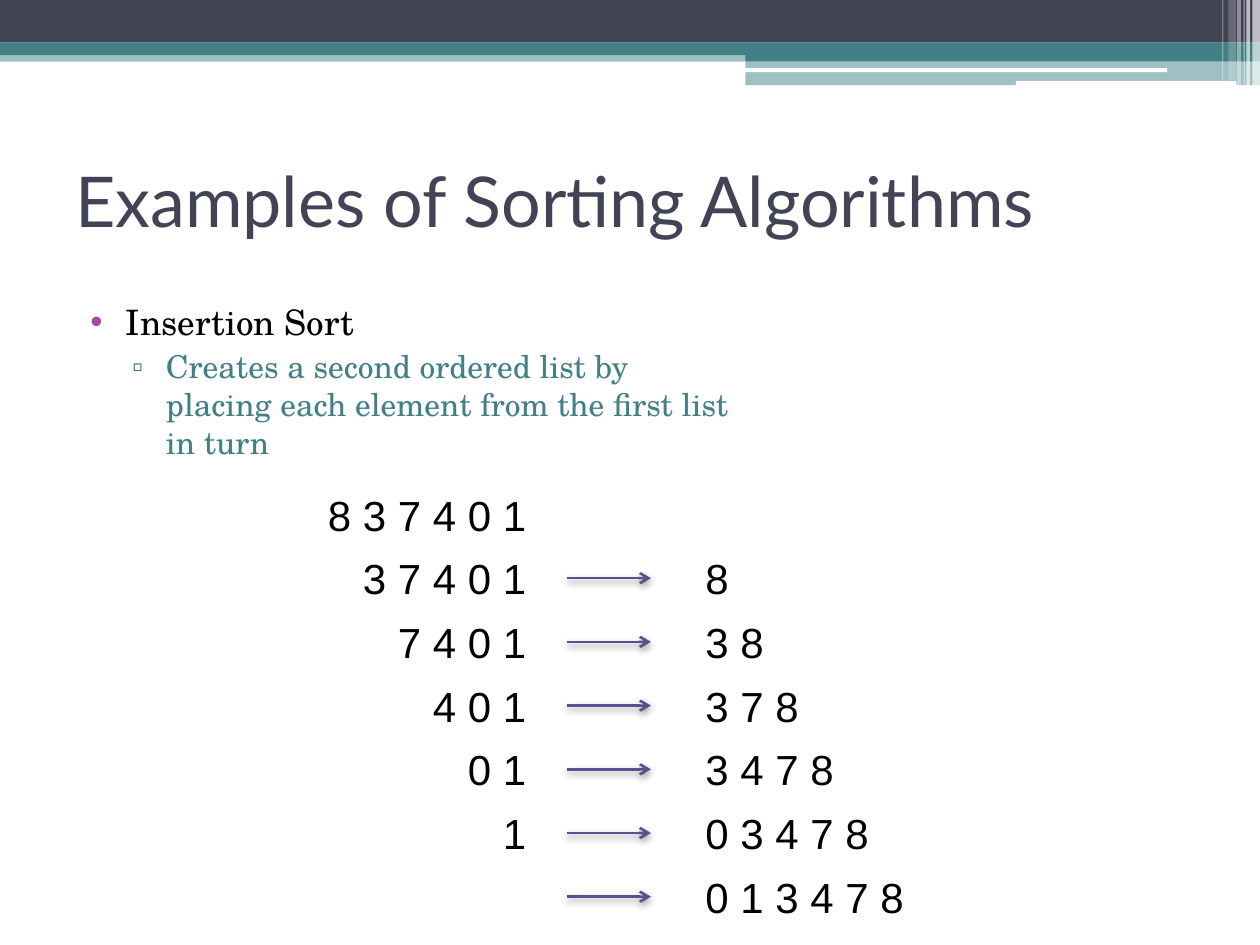
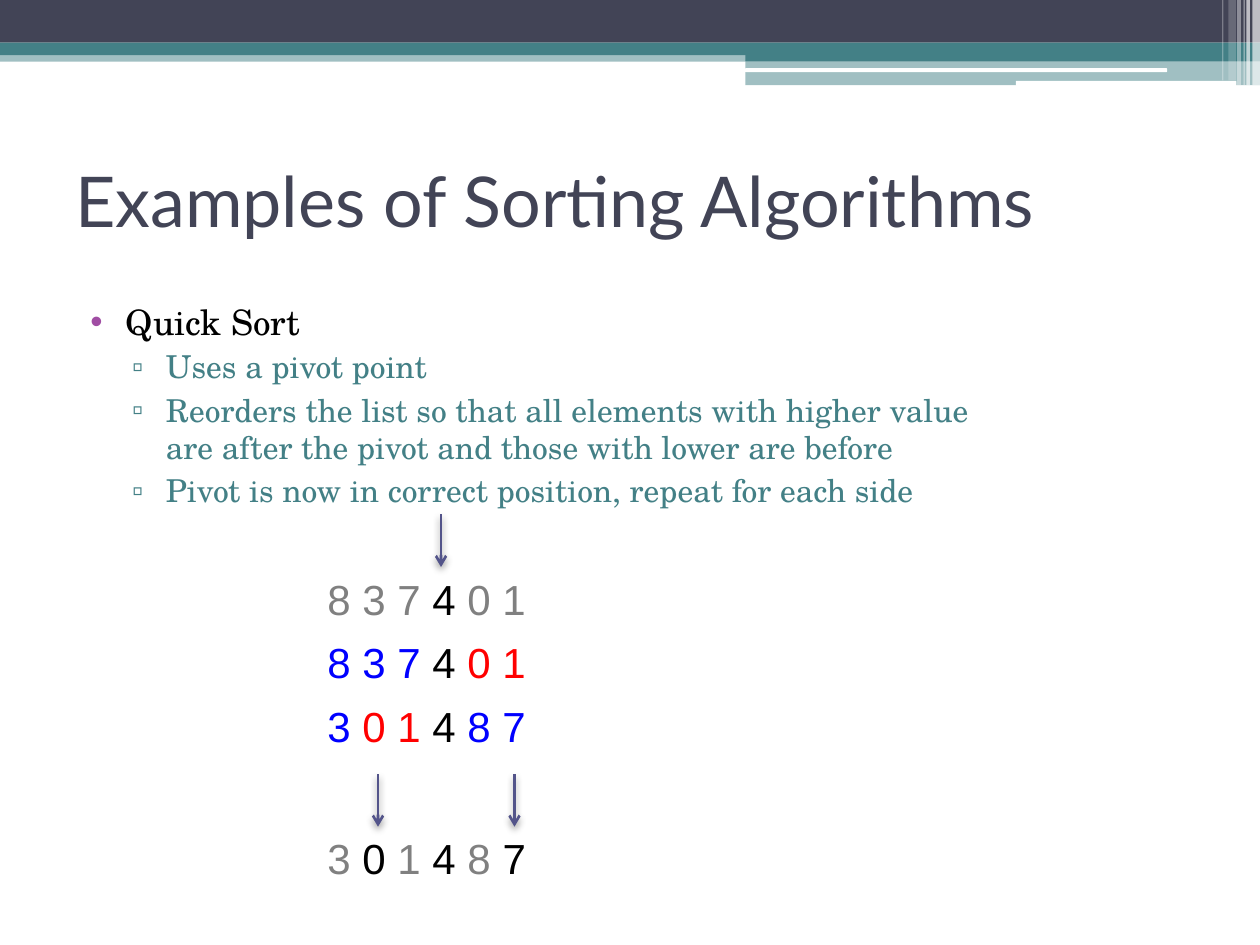
from lxml.etree import SubElement
from pptx import Presentation
from pptx.dml.color import RGBColor as RGB
from pptx.enum.shapes import MSO_CONNECTOR as LINK, MSO_SHAPE as SHAPE
from pptx.enum.text import MSO_ANCHOR as ANCHOR, PP_ALIGN as ALIGN
from pptx.oxml.ns import qn
from pptx.util import Pt

COLORS = {
    "navy": "424456", "teal": "438086", "white": "FFFFFF", "black": "000000",
    "purple": "A04DA3", "arrow": "53548A", "gray": "808080",
    "blue": "0000FF", "red": "FF0000",
}
ROW_PITCH = 36.4
ROW_HEIGHT = 36
LIST_LEFT = 180

BANDS = [
    (SHAPE.RECTANGLE, 0, 28.8, 720, 6.4, "teal", 50),
    (SHAPE.RECTANGLE, 0, 0, 720, 24.4, "navy", 100),
    (SHAPE.RECTANGLE, 0, 24.4, 720, 7.2, "teal", 100),
    (SHAPE.RECTANGLE, 426, 28.2, 294, 6.6, "teal", 100),
    (SHAPE.RECTANGLE, 426, 34.6, 294, 14.1, "teal", 50),
    (SHAPE.ROUNDED_RECTANGLE, 425.7, 39, 241.2, 2.2, "white", 100),
    (SHAPE.ROUNDED_RECTANGLE, 580.5, 46.2, 126, 2.9, "white", 100),
    (SHAPE.RECTANGLE, 715.6, 0, 4.4, 48.8, "white", 65),
    (SHAPE.RECTANGLE, 712.2, 0, 2.1, 48.8, "white", 65),
    (SHAPE.RECTANGLE, 710.6, 0, 0.7, 48.8, "white", 60),
    (SHAPE.RECTANGLE, 707, 0, 2.1, 48.8, "white", 40),
    (SHAPE.RECTANGLE, 702, 0, 4.3, 46, "white", 20),
    (SHAPE.RECTANGLE, 698.4, 0, 0.7, 46, "white", 30),
]

LEVELS = [
    {"bullet": "•", "bullet_color": "purple", "color": "black", "size": 20, "left": 28.8, "hang": -20.2},
    {"bullet": "▫", "bullet_color": "teal", "color": "teal", "size": 18, "left": 51.8, "hang": -19.4},
]

TOPICS = [
    (390, 120, ["Insertion Sort",
                "Creates a second ordered list by placing each element from the first list in turn"]),
    (546, 340, ["Quick Sort",
                "Uses a pivot point",
                "Reorders the list so that all elements with higher value are after the pivot "
                "and those with lower are before",
                "Pivot is now in correct position, repeat for each side"]),
]


def add_digits(slide, left, top, width, runs, align=ALIGN.LEFT):
    row = slide.shapes.add_textbox(Pt(left), Pt(top), Pt(width), Pt(ROW_HEIGHT)).text_frame
    row.word_wrap = True
    line = row.paragraphs[0]
    line.alignment = align
    line.font.size = Pt(24)
    line.font.name = "Arial"
    for text, color in runs:
        run = line.add_run()
        run.text = text
        run.font.color.rgb = RGB.from_string(COLORS[color])


def add_arrow(slide, x1, y1, x2, y2):
    arrow = slide.shapes.add_connector(LINK.STRAIGHT, Pt(x1), Pt(y1), Pt(x2), Pt(y2))
    arrow.line.width = Pt(1.5)
    arrow.line.color.rgb = RGB.from_string(COLORS["arrow"])
    SubElement(arrow.line._get_or_add_ln(), qn("a:tailEnd"), type="arrow")
    effects = SubElement(arrow._element.spPr, qn("a:effectLst"))
    shadow = SubElement(effects, qn("a:outerShdw"), blurRad=str(Pt(4.1)), dist=str(Pt(2)),
                        dir="5400000", rotWithShape="0")
    tint = SubElement(shadow, qn("a:srgbClr"), val=COLORS["black"])
    SubElement(tint, qn("a:alpha"), val="40000")


deck = Presentation()
deck.slide_width, deck.slide_height = Pt(720), Pt(540)

for body_width, body_height, lines in TOPICS:
    slide = deck.slides.add_slide(deck.slide_layouts[6])

    for preset, left, top, width, height, color, opacity in BANDS:
        band = slide.shapes.add_shape(preset, Pt(left), Pt(top), Pt(width), Pt(height))
        band.shadow.inherit = False
        band.line.fill.background()
        band.fill.solid()
        band.fill.fore_color.rgb = RGB.from_string(COLORS[color])
        if opacity < 100:
            tint = band._element.spPr.find(qn("a:solidFill"))[0]
            SubElement(tint, qn("a:alpha"), val=str(opacity * 1000))

    title = slide.shapes.add_textbox(Pt(36), Pt(72), Pt(648), Pt(84)).text_frame
    title.word_wrap = True
    title.vertical_anchor = ANCHOR.MIDDLE
    heading = title.paragraphs[0]
    heading.text = "Examples of Sorting Algorithms"
    heading.font.size = Pt(40)
    heading.font.name = "Lato"
    heading.font.color.rgb = RGB.from_string(COLORS["navy"])

    body = slide.shapes.add_textbox(Pt(36), Pt(168), Pt(body_width), Pt(body_height)).text_frame
    body.word_wrap = True
    for i, text in enumerate(lines):
        level = LEVELS[min(i, 1)]
        point = body.add_paragraph() if i else body.paragraphs[0]
        point.text = text
        point.level = min(i, 1)
        point.space_before = Pt(3)
        point.font.size = Pt(level["size"])
        point.font.name = "TeX Gyre Schola"
        point.font.color.rgb = RGB.from_string(COLORS[level["color"]])
        props = point._p.get_or_add_pPr()
        props.set("marL", str(Pt(level["left"])))
        props.set("indent", str(Pt(level["hang"])))
        bullet_color = SubElement(props, qn("a:buClr"))
        SubElement(bullet_color, qn("a:srgbClr"), val=COLORS[level["bullet_color"]])
        SubElement(props, qn("a:buFont"), typeface="Arial")
        SubElement(props, qn("a:buChar"), char=level["bullet"])

insertion, quick = deck.slides

unsorted = ["8", "3", "7", "4", "0", "1"]
for step in range(len(unsorted) + 1):
    top = 276 + step * ROW_PITCH
    remaining = unsorted[step:]
    placed = sorted(unsorted[:step])
    if remaining:
        add_digits(insertion, LIST_LEFT, top, 127.8, [(" ".join(remaining), "black")], ALIGN.RIGHT)
    if placed:
        add_digits(insertion, 396, top, 162, [(" ".join(placed), "black")])
        middle = top + ROW_HEIGHT / 2
        add_arrow(insertion, 324, middle, 372, middle)

first_top, last_top = 324, 472.4
passes = [
    (first_top, [("8 3 7 ", "gray"), ("4 ", "black"), ("0 1", "gray")]),
    (first_top + ROW_PITCH, [("8 3 7 ", "blue"), ("4 ", "black"), ("0 1", "red")]),
    (first_top + 2 * ROW_PITCH, [("3 ", "blue"), ("0 1 ", "red"), ("4 ", "black"), ("8 7", "blue")]),
    (last_top, [("3 ", "gray"), ("0 ", "black"), ("1 ", "gray"), ("4 ", "black"),
                ("8 ", "gray"), ("7", "black")]),
]
for top, runs in passes:
    add_digits(quick, LIST_LEFT, top, 192, runs)

for pivot_x, tip in [(252, first_top), (216, last_top), (294, last_top)]:
    add_arrow(quick, pivot_x, tip - 30, pivot_x, tip)

deck.save("out.pptx")
